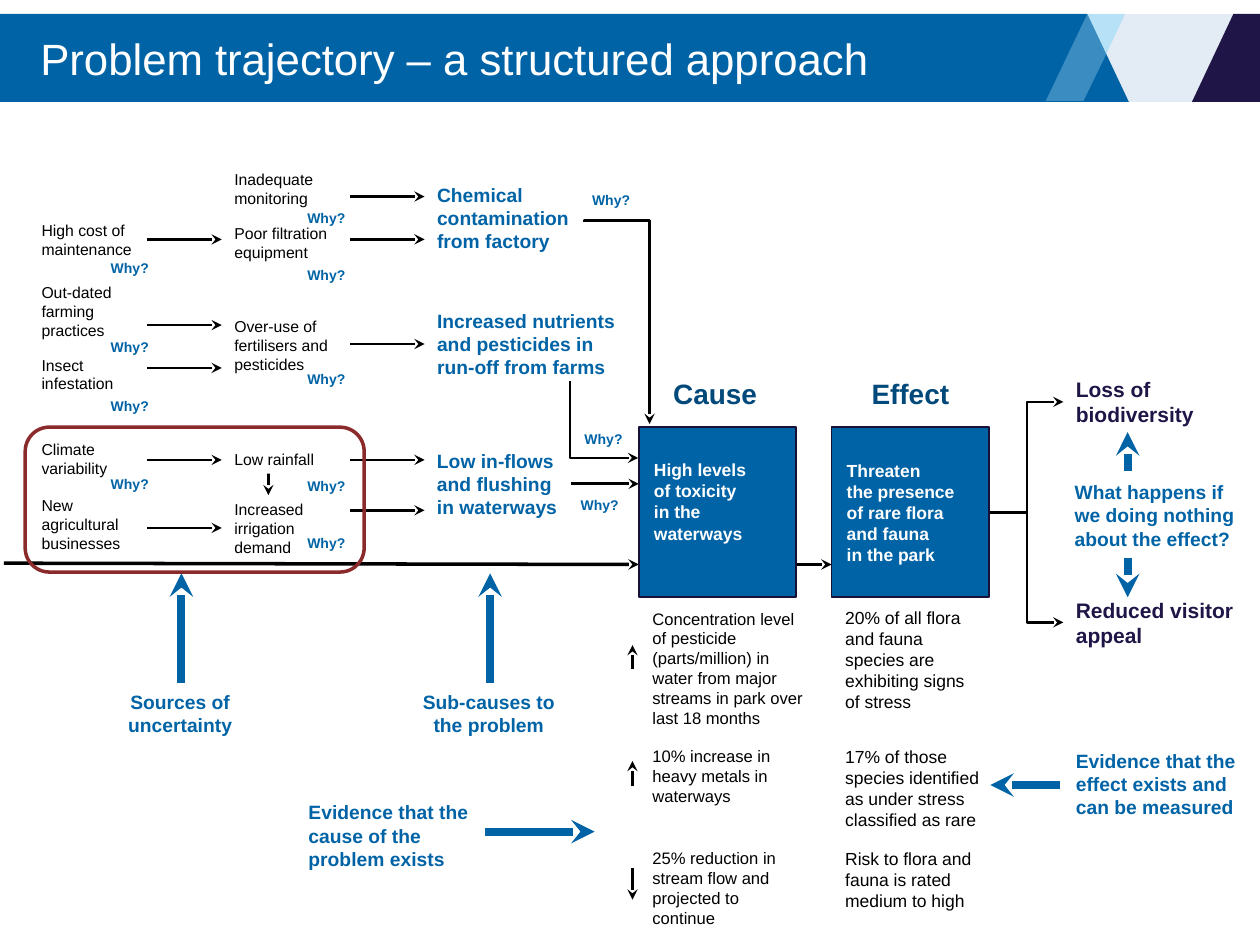
"""Build the problem trajectory slide: sources, sub-causes, cause, effect and evidence."""
from typing import NamedTuple

from lxml import etree
from pptx import Presentation
from pptx import util as u
from pptx.dml import color
from pptx.enum import shapes, text
from pptx.oxml import ns

BLUE, DARK_BLUE, NAVY = "0063A6", "00497A", "201547"
BLACK, WHITE, PALE, MAROON = "000000", "FFFFFF", "E3EBF4", "8A2A2B"
LEFT, CENTER = text.PP_ALIGN.LEFT, text.PP_ALIGN.CENTER
TOP, MIDDLE = text.MSO_ANCHOR.TOP, text.MSO_ANCHOR.MIDDLE
GROW, FIXED = text.MSO_AUTO_SIZE.SHAPE_TO_FIT_TEXT, text.MSO_AUTO_SIZE.NONE


class Label(NamedTuple):
    left: float
    top: float
    width: float
    height: float
    words: str


class Arrow(NamedTuple):
    x1: float
    y1: float
    x2: float
    y2: float
    weight: float = 1.5
    hue: str = BLACK


class Elbow(NamedTuple):
    x1: float
    y1: float
    x2: float
    y2: float
    bend: int = 50000
    rotation: int = 0
    end: str = "tailEnd"


class Band(NamedTuple):
    hue: str
    opacity: int
    points: list


BANNER = [
    Band(PALE, 100, [(8.58, 0.11), (9.8, 0.11), (9.8, 0.81), (8.58, 0.81)]),
    Band(BLUE, 100, [(0, 0.11), (8.63, 0.11), (8.96, 0.81), (0, 0.81)]),
    Band("52CCFF", 30, [(8.63, 0.11), (8.93, 0.11), (8.78, 0.43)]),
    Band("C5EEFF", 30, [(8.63, 0.11), (8.3, 0.8), (8.6, 0.8), (8.78, 0.43)]),
    Band(NAVY, 100, [(9.79, 0.11), (10, 0.11), (10, 0.81), (9.46, 0.81)]),
]
SOURCE_ROWS = [1.9, 2.58, 2.92, 3.65, 4.19]
SUB_CAUSE_ROWS = [1.56, 1.9, 2.73, 3.65, 4.05]
ARROWS = [
    Arrow(0.03, 4.47, 5.07, 4.48, 2), Arrow(6.16, 4.48, 6.6, 4.48, 2),
    *[Arrow(1.17, y, 1.76, y) for y in SOURCE_ROWS],
    *[Arrow(2.78, y, 3.37, y) for y in SUB_CAUSE_ROWS],
    Arrow(2.13, 3.7, 2.13, 3.93), Arrow(4.53, 3.84, 5.07, 3.84),
    Arrow(5.02, 5.31, 5.02, 5.12), Arrow(5.02, 6.24, 5.02, 6.04),
    Arrow(5.02, 6.89, 5.02, 7.14),
    *[Arrow(x, 5.42, x, 4.55, 4.5, BLUE) for x in (1.44, 3.89)],
    Arrow(3.85, 6.6, 4.72, 6.6, 4.5, BLUE), Arrow(8.41, 6.23, 7.86, 6.23, 4.5, BLUE),
    Arrow(8.95, 3.74, 8.95, 3.43, 4.5, BLUE), Arrow(8.95, 4.43, 8.95, 4.74, 4.5, BLUE),
]
ELBOWS = [
    Elbow(7.86, 4.07, 8.44, 3.19), Elbow(7.86, 4.07, 8.44, 4.94),
    Elbow(5.1, 3.06, 4.49, 3.6, 99900, 270),
    Elbow(4.09, 2.82, 5.7, 2.3, 100300, 270, "headEnd"),
]
SOURCES = [
    Label(0.31, 1.7, 1.24, 0.4, "High cost of maintenance"),
    Label(0.31, 2.19, 1.24, 0.56, "Out-dated\vfarming\vpractices"),
    Label(0.31, 2.77, 1.24, 0.4, "Insect\vinfestation"),
    Label(0.31, 3.44, 1.24, 0.4, "Climate\vvariability"),
    Label(0.31, 3.88, 1.24, 0.56, "New\vagricultural\nbusinesses"),
    Label(1.84, 1.3, 1.24, 0.4, "Inadequate monitoring"),
    Label(1.84, 1.73, 1.24, 0.4, "Poor filtration equipment"),
    Label(1.84, 2.46, 1.24, 0.56, "Over-use of\vfertilisers and pesticides"),
    Label(1.84, 3.91, 1.24, 0.56, "Increased\virrigation\vdemand"),
]
SUB_CAUSES = [
    Label(3.37, 1.4, 1.32, 0.66, "Chemical contamination from factory"),
    Label(3.37, 2.4, 1.62, 0.66, "Increased nutrients and pesticides in run-off from farms"),
    Label(3.37, 3.51, 1.27, 0.66, "Low in-flows\vand flushing in waterways"),
    Label(2.35, 6.3, 1.66, 0.66, "Evidence that the cause of the problem exists"),
    Label(8.44, 5.89, 1.66, 0.66, "Evidence that the effect exists and can be measured"),
]
CAUSE_EVIDENCE = [
    Label(5.08, 4.78, 1.39, 1.06, "Concentration level of pesticide (parts/million) in water "
          "from major streams in park over last 18 months"),
    Label(5.08, 5.87, 1.39, 0.58, "10% increase in heavy metals in waterways"),
    Label(5.08, 6.68, 1.39, 0.74, "25% reduction in stream flow and projected to continue"),
]
EFFECT_EVIDENCE = [
    Label(6.61, 4.77, 1.26, 0.94, "20% of all flora and fauna species are exhibiting signs of stress"),
    Label(6.61, 5.87, 1.39, 0.77, "17% of those species identified as under stress classified as rare"),
    Label(6.61, 6.68, 1.39, 0.61, "Risk to flora and fauna is rated medium to high"),
]
OUTCOMES = [Label(8.44, 2.94, 1.48, 0.5, "Loss of biodiversity"),
            Label(8.44, 4.69, 1.48, 0.5, "Reduced visitor appeal")]
CAPTIONS = [Label(0.42, 5.43, 2.02, 0.47, "Sources of\vuncertainty"),
            Label(3.15, 5.43, 1.46, 0.47, "Sub-causes to the problem")]
HEADINGS = [Label(5.15, 2.94, 1.05, 0.37, "Cause"), Label(6.7, 2.94, 1.05, 0.37, "Effect")]
WHY_SPOTS = [
    *[(0.78, y) for y in (2.01, 2.63, 3.1, 3.72)],
    *[(2.34, y) for y in (1.61, 2.06, 2.89, 3.74, 4.19)],
    (4.6, 1.47), (4.54, 3.36), (4.51, 3.89),
]
WHYS = [Label(x, y, 0.55, 0.24, "Why?") for x, y in WHY_SPOTS]


def rgb(value: str) -> color.RGBColor:
    return color.RGBColor.from_string(value)


def inches(*values: float) -> list:
    return [u.Inches(value) for value in values]


def paint(shape, hue: str) -> None:
    shape.fill.solid()
    shape.fill.fore_color.rgb = rgb(hue)


def write(shape, words: str, *, size: float, hue: str = BLACK, bold: bool = False, align=LEFT,
          anchor=TOP, insets: tuple = (0.1, 0.05, 0.1, 0.05), wrap: bool = True, fit=GROW) -> None:
    frame = shape.text_frame
    frame.text = words
    frame.word_wrap, frame.auto_size, frame.vertical_anchor = wrap, fit, anchor
    (frame.margin_left, frame.margin_top,
     frame.margin_right, frame.margin_bottom) = inches(*insets)
    for paragraph in frame.paragraphs:
        paragraph.alignment = align
        for run in paragraph.runs:
            run.font.name, run.font.size, run.font.bold = "Arial", u.Pt(size), bold
            run.font.color.rgb = rgb(hue)


def add_label(slide, label: Label, *, back: str = "", **style) -> None:
    box = slide.shapes.add_textbox(*inches(*label[:4]))
    if back:
        paint(box, back)
    write(box, label.words, **style)


def add_band(slide, band: Band) -> None:
    points = [inches(*point) for point in band.points]
    builder = slide.shapes.build_freeform(*points[0], scale=1.0)
    builder.add_line_segments(points[1:], close=True)
    shape = builder.convert_to_shape()
    shape.shadow.inherit = False
    paint(shape, band.hue)
    shape.line.fill.background()
    if band.opacity < 100:
        tint = shape._element.spPr.find(".//" + ns.qn("a:srgbClr"))
        etree.SubElement(tint, ns.qn("a:alpha"), val=str(band.opacity * 1000))


def add_arrow(slide, arrow, kind=shapes.MSO_CONNECTOR.STRAIGHT, weight: float = 1.5,
              hue: str = BLACK, end: str = "tailEnd"):
    connector = slide.shapes.add_connector(kind, *inches(*arrow[:4]))
    connector.line.width = u.Pt(weight)
    connector.line.color.rgb = rgb(hue)
    etree.SubElement(connector.line._get_or_add_ln(), ns.qn("a:" + end), type="stealth")
    etree.SubElement(connector._element.spPr, ns.qn("a:effectLst"))
    return connector


def add_elbow(slide, elbow: Elbow) -> None:
    connector = add_arrow(slide, elbow, shapes.MSO_CONNECTOR.ELBOW, end=elbow.end)
    properties = connector._element.spPr
    properties.find(ns.qn("a:xfrm")).set("rot", str(elbow.rotation * 60000))
    guides = properties.find(".//" + ns.qn("a:avLst"))
    etree.SubElement(guides, ns.qn("a:gd"), name="adj1", fmla=f"val {elbow.bend}")


def add_stage(slide, left: float, words: str, bottom_inset: float) -> None:
    stage = slide.shapes.add_shape(shapes.MSO_SHAPE.RECTANGLE, *inches(left, 3.39, 1.25, 1.35))
    stage.shadow.inherit = False
    paint(stage, BLUE)
    stage.line.color.rgb, stage.line.width = rgb("181035"), u.Pt(1)
    write(stage, words, size=10, hue=WHITE, bold=True, anchor=MIDDLE, wrap=False, fit=FIXED,
          insets=(0.12, 0.05, 0.12, bottom_inset))


def main() -> None:
    deck = Presentation()
    deck.slide_width, deck.slide_height = inches(10, 7.5)
    slide = deck.slides.add_slide(deck.slide_layouts[5])
    for band in BANNER:
        add_band(slide, band)
    title = slide.shapes.title
    title.left, title.top, title.width, title.height = inches(0.22, 0.12, 9, 0.68)
    write(title, "Problem trajectory – a structured approach", size=25, hue=WHITE,
          anchor=MIDDLE, fit=FIXED)
    slide.shapes._spTree.append(title._element)

    for arrow in ARROWS:
        add_arrow(slide, arrow, weight=arrow.weight, hue=arrow.hue)
    for elbow in ELBOWS:
        add_elbow(slide, elbow)
    add_stage(slide, 5.07, "High levels\nof toxicity\nin the\nwaterways", 0.22)
    add_stage(slide, 6.6, "Threaten\nthe presence\vof rare flora\nand fauna\nin the park", 0.05)

    source = dict(size=9, anchor=MIDDLE, insets=(0.02, 0.05, 0.02, 0.05))
    strong = dict(size=11, hue=BLUE, bold=True)
    for labels, style in [
        (SOURCES, source),
        ([Label(1.84, 3.53, 0.87, 0.23, "Low rainfall")], source | dict(back=WHITE)),
        (SUB_CAUSES, strong | dict(anchor=MIDDLE)),
        ([Label(8.43, 3.76, 1.49, 0.66, "What happens if we doing nothing about the effect?")],
         strong | dict(anchor=MIDDLE, back=WHITE)),
        (CAPTIONS, strong | dict(align=CENTER)),
        (CAUSE_EVIDENCE, dict(size=9.5)),
        (EFFECT_EVIDENCE, dict(size=10)),
        (OUTCOMES, dict(size=12, hue=NAVY, bold=True)),
        (HEADINGS, dict(size=16, hue=DARK_BLUE, bold=True, align=CENTER)),
        (WHYS, strong | dict(size=8, anchor=MIDDLE)),
    ]:
        for label in labels:
            add_label(slide, label, **style)

    uncertainty = slide.shapes.add_shape(shapes.MSO_SHAPE.ROUNDED_RECTANGLE,
                                         *inches(0.2, 3.39, 2.69, 1.15))
    uncertainty.shadow.inherit = False
    uncertainty.fill.background()
    uncertainty.line.color.rgb, uncertainty.line.width = rgb(MAROON), u.Pt(2)
    deck.save("out.pptx")


if __name__ == "__main__":
    main()
